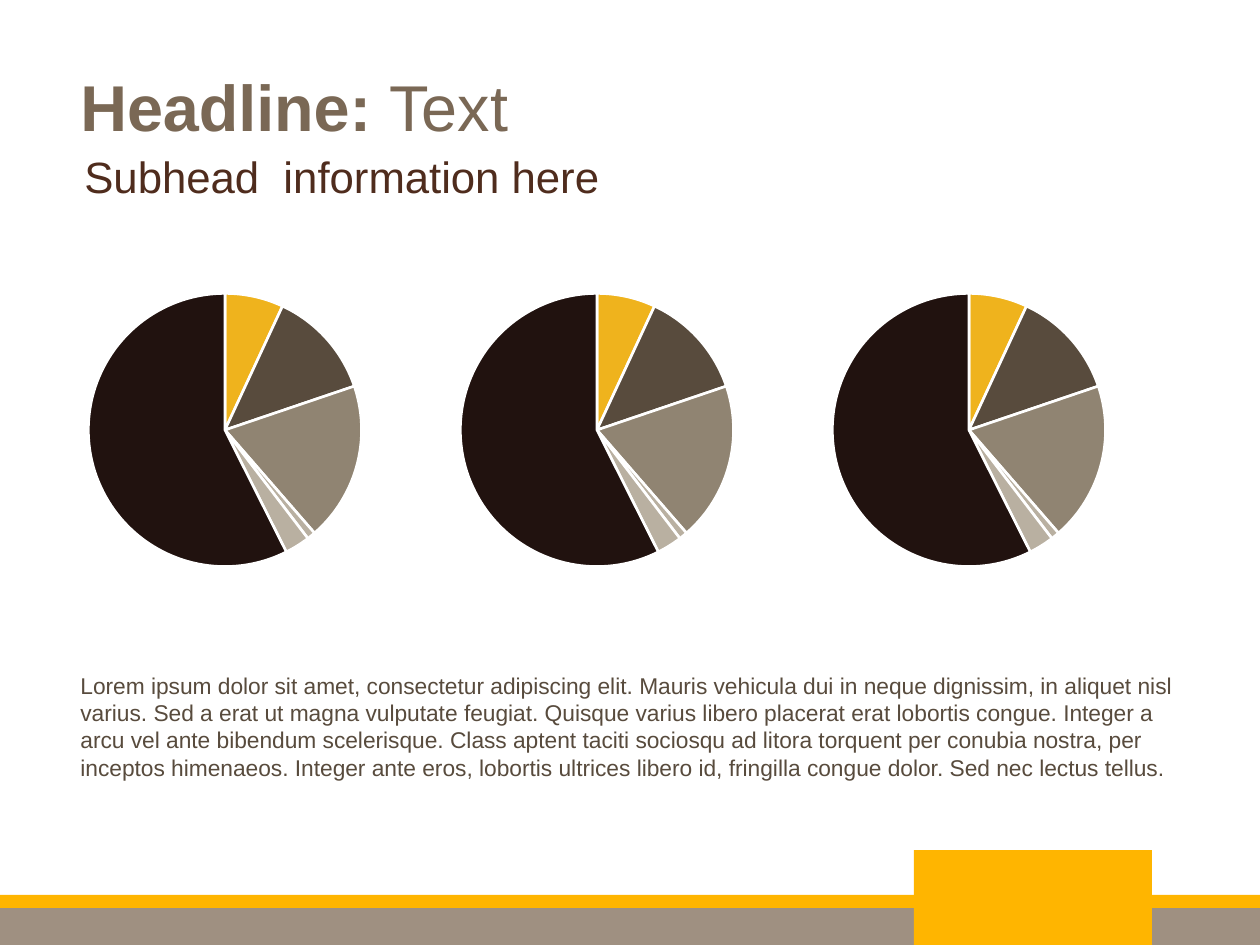
"""Builds a slide with a headline, three pie charts and a paragraph of text."""
from dataclasses import dataclass

from pptx import Presentation
from pptx import util as u
from pptx.chart import data as chart_data
from pptx.dml.color import RGBColor
from pptx.enum import chart as charts, shapes, text


@dataclass(frozen=True)
class Theme:
    font: str = "Arial"
    chart_font: str = "Calibri"
    headline: str = "7A6855"
    subhead: str = "4F2C1D"
    body: str = "584B3D"
    band: str = "9F9081"
    accent: str = "FFB500"
    paper: str = "FFFFFF"
    chart_text: str = "000000"
    slices: tuple = ("EFB31D", "584B3D", "908472", "B9B0A1", "B9B0A1", "21120F")
    headline_size: int = 37
    subhead_size: int = 25
    body_size: int = 13
    chart_size: int = 12


class Deck:
    EMU_PER_PX = 914400 / 126

    def __init__(self, theme, width, height):
        self.theme = theme
        self.presentation = Presentation()
        self.presentation.slide_width = self.px(width)
        self.presentation.slide_height = self.px(height)
        self.slide = self.presentation.slides.add_slide(self.presentation.slide_layouts[6])

    def px(self, length):
        return u.Emu(round(length * self.EMU_PER_PX))

    def place(self, box):
        return [self.px(length) for length in box]

    def band(self, box, color):
        band = self.slide.shapes.add_shape(shapes.MSO_SHAPE.RECTANGLE, *self.place(box))
        band.shadow.inherit = False
        band.fill.solid()
        band.fill.fore_color.rgb = RGBColor.from_string(color)
        band.line.fill.background()

    def words(self, box, runs, size, color, anchor=text.MSO_ANCHOR.TOP, spacing=None):
        frame = self.slide.shapes.add_textbox(*self.place(box)).text_frame
        frame.word_wrap = True
        frame.vertical_anchor = anchor
        paragraph = frame.paragraphs[0]
        paragraph.line_spacing = spacing
        for wording, bold in runs:
            run = paragraph.add_run()
            run.text = wording
            run.font.name = self.theme.font
            run.font.size = u.Pt(size)
            run.font.bold = bold
            run.font.color.rgb = RGBColor.from_string(color)

    def pie(self, box, name, shares):
        data = chart_data.CategoryChartData()
        data.categories = [str(number) for number in range(1, len(shares) + 1)]
        data.add_series(name, shares)
        pie = self.slide.shapes.add_chart(charts.XL_CHART_TYPE.PIE, *self.place(box), data).chart
        pie.has_title = False
        pie.has_legend = False
        pie.font.name = self.theme.chart_font
        pie.font.size = u.Pt(self.theme.chart_size)
        pie.font.color.rgb = RGBColor.from_string(self.theme.chart_text)
        plot = pie.plots[0]
        plot.vary_by_categories = True
        for index, color in enumerate(self.theme.slices):
            piece = plot.series[0].points[index].format
            piece.fill.solid()
            piece.fill.fore_color.rgb = RGBColor.from_string(color)
            piece.line.color.rgb = RGBColor.from_string(self.theme.paper)
            piece.line.width = u.Pt(1.5)


def main():
    theme = Theme()
    deck = Deck(theme, 1260, 945)

    deck.band((0, 907, 1260, 38), theme.band)
    deck.band((0, 895, 1260, 13), theme.accent)
    deck.band((914, 850, 238, 95), theme.accent)

    deck.words((68, 69, 1134, 118), [("Headline: ", True), ("Text", False)],
               theme.headline_size, theme.headline, spacing=0.9)
    deck.words((72, 144, 1136, 66), [("Subhead  information here", False)],
               theme.subhead_size, theme.subhead)

    shares = (7, 13, 19, 1, 3, 58)
    first_left, step = 21, 372
    for column in range(3):
        deck.pie((first_left + column * step, 276, 408, 308), "Series 1", shares)

    lorem = (
        "Lorem ipsum dolor sit amet, consectetur adipiscing elit. Mauris vehicula dui in neque "
        "dignissim, in aliquet nisl varius. Sed a erat ut magna vulputate feugiat. Quisque varius "
        "libero placerat erat lobortis congue. Integer a arcu vel ante bibendum scelerisque. Class "
        "aptent taciti sociosqu ad litora torquent per conubia nostra, per inceptos himenaeos. "
        "Integer ante eros, lobortis ultrices libero id, fringilla congue dolor. Sed nec lectus tellus."
    )
    deck.words((68, 670, 1139, 112), [(lorem, False)], theme.body_size, theme.body,
               anchor=text.MSO_ANCHOR.MIDDLE)

    deck.presentation.save("out.pptx")


if __name__ == "__main__":
    main()
